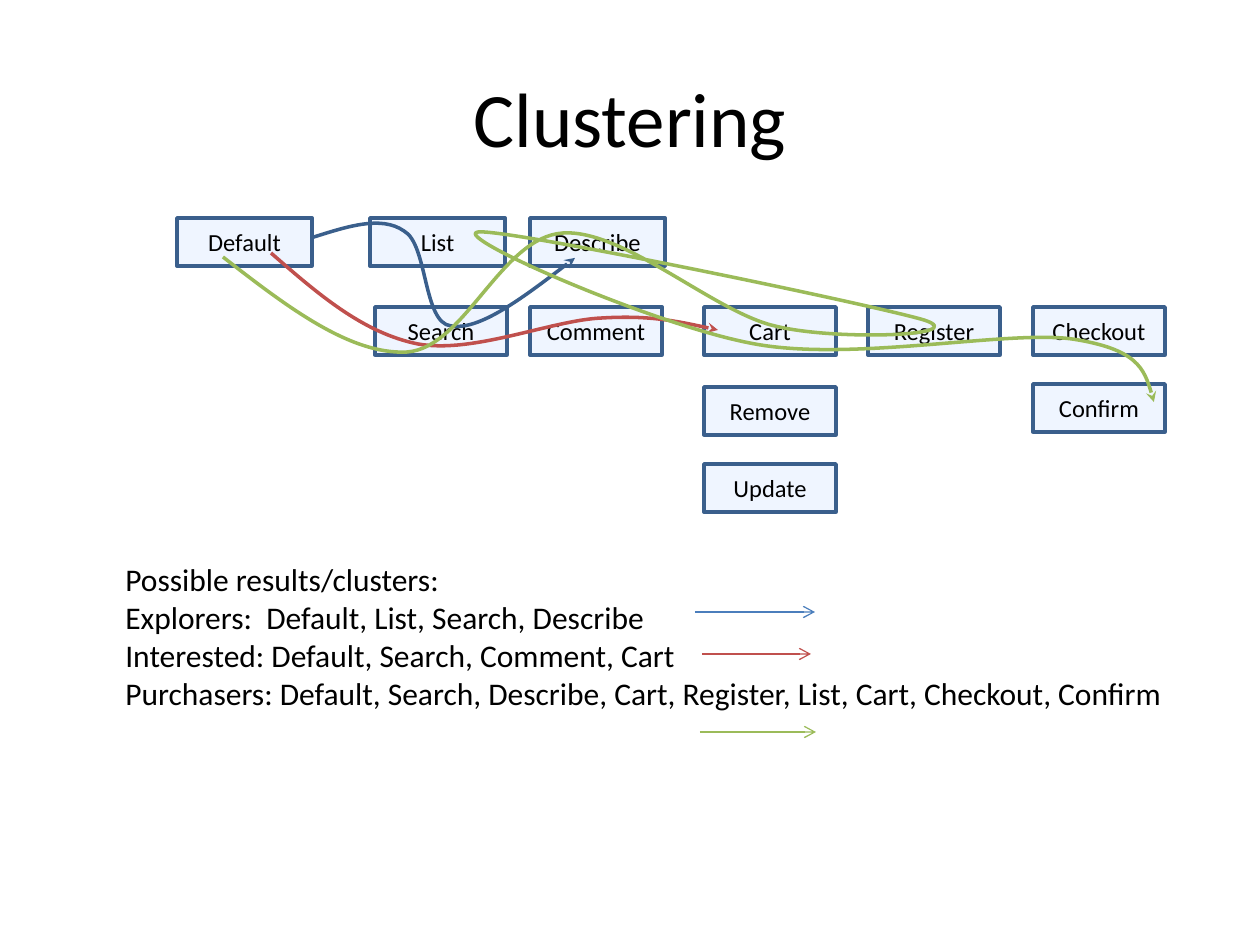
from lxml.etree import SubElement
from pptx import Presentation
from pptx.dml.color import RGBColor
from pptx.enum.shapes import MSO_CONNECTOR, MSO_SHAPE
from pptx.enum.text import MSO_ANCHOR, MSO_AUTO_SIZE, PP_ALIGN
from pptx.oxml.ns import qn
from pptx.util import Pt

BLACK = RGBColor(0x00, 0x00, 0x00)
PALE = RGBColor(0xEF, 0xF5, 0xFF)
NAVY = RGBColor(0x3A, 0x5F, 0x8C)
BLUE = RGBColor(0x4B, 0x7E, 0xBC)
RED = RGBColor(0xC0, 0x50, 0x4D)
GREEN = RGBColor(0x9B, 0xBB, 0x59)
SCALE = 914400 / 126


def px(*nums):
    return [round(num * SCALE) for num in nums]


def style(line, color, width, head):
    line.color.rgb = color
    line.width = Pt(width)
    SubElement(line._get_or_add_ln(), qn("a:tailEnd"), type=head)


deck = Presentation()
deck.slide_width, deck.slide_height = px(1260, 945)
slide = deck.slides.add_slide(deck.slide_layouts[5])
shapes = slide.shapes

title = shapes.title
title.left, title.top, title.width, title.height = px(63, 38, 1134, 157)
title.text_frame.text = "Clustering"
title.text_frame.vertical_anchor = MSO_ANCHOR.MIDDLE
para = title.text_frame.paragraphs[0]
para.alignment = PP_ALIGN.CENTER
para.runs[0].font.size = Pt(44)
para.runs[0].font.name = "Calibri"
para.runs[0].font.color.rgb = BLACK

pages = [
    ("Describe", 530, 218, 135),
    ("Comment", 530, 307, 132),
    ("Cart", 704, 307, 132),
    ("Remove", 704, 387, 132),
    ("Register", 868, 307, 132),
    ("Checkout", 1033, 307, 132),
    ("Confirm", 1033, 384, 132),
    ("Search", 375, 307, 132),
    ("List", 370, 218, 135),
    ("Default", 177, 218, 135),
    ("Update", 704, 464, 132),
]
for name, left, top, width in pages:
    box = shapes.add_shape(MSO_SHAPE.RECTANGLE, *px(left, top, width, 48))
    box.shadow.inherit = False
    box.fill.solid()
    box.fill.fore_color.rgb = PALE
    box.line.color.rgb = NAVY
    box.line.width = Pt(2)
    box.text_frame.text = name
    box.text_frame.vertical_anchor = MSO_ANCHOR.MIDDLE
    para = box.text_frame.paragraphs[0]
    para.alignment = PP_ALIGN.CENTER
    para.runs[0].font.size = Pt(14)
    para.runs[0].font.name = "Calibri"
    para.runs[0].font.color.rgb = BLACK

notes = shapes.add_textbox(*px(113, 554, 1074, 165))
frame = notes.text_frame
frame.word_wrap = False
frame.auto_size = MSO_AUTO_SIZE.SHAPE_TO_FIT_TEXT
frame.text = "\n".join([
    "Possible results/clusters:",
    "Explorers:  Default, List, Search, Describe",
    "Interested: Default, Search, Comment, Cart",
    "Purchasers: Default, Search, Describe, Cart, Register, List, Cart, Checkout, Confirm",
])
for para in frame.paragraphs:
    para.runs[0].font.size = Pt(18)
    para.runs[0].font.name = "Calibri"
    para.runs[0].font.color.rgb = BLACK

trails = [
    (NAVY, (311, 223, 263, 103), [
        (311, 238), (346, 227), (381, 215), (404, 231), (428, 244),
        (423, 323), (451, 326), (479, 331), (527, 295), (575, 258)],
     BLUE, (695, 815, 612)),
    (RED, (271, 253, 449, 92), [
        (271, 253), (318, 294), (363, 333), (418, 344), (474, 354),
        (552, 320), (602, 318), (651, 315), (685, 323), (718, 330)],
     RED, (702, 811, 654)),
    (GREEN, (223, 232, 932, 170), [
        (223, 257), (286, 306), (350, 355), (407, 352), (465, 348),
        (501, 237), (563, 233), (624, 229), (714, 312), (775, 326),
        (835, 341), (974, 336), (924, 320), (874, 305), (505, 228),
        (478, 232), (450, 236), (655, 326), (755, 344), (853, 362),
        (1006, 330), (1072, 339), (1138, 349), (1147, 375), (1154, 402)],
     GREEN, (700, 816, 732)),
]
for color, bounds, points, tint, (start, end, level) in trails:
    spots = [px(*point) for point in points]
    pen = shapes.build_freeform(*spots[0])
    pen.add_line_segments(spots[1:], close=False)
    trail = pen.convert_to_shape()
    left, top, width, height = px(*bounds)
    trail.left, trail.top, trail.width, trail.height = left, top, width, height
    route = trail._element.find(".//" + qn("a:path"))
    route.set("w", str(width))
    route.set("h", str(height))
    for node, (x, y) in zip(route.iter(qn("a:pt")), spots):
        node.set("x", str(x - left))
        node.set("y", str(y - top))
    legs = route.findall(qn("a:lnTo"))
    for first in range(0, len(legs), 3):
        curve = SubElement(route, qn("a:cubicBezTo"))
        for leg in legs[first:first + 3]:
            curve.append(leg[0])
            route.remove(leg)
    trail.fill.background()
    style(trail.line, color, 2, "stealth")
    trail.shadow.inherit = False

    key = shapes.add_connector(MSO_CONNECTOR.STRAIGHT, *px(start, level, end, level))
    style(key.line, tint, 0.75, "arrow")
    SubElement(key._element.spPr, qn("a:effectLst"))

deck.save("out.pptx")
